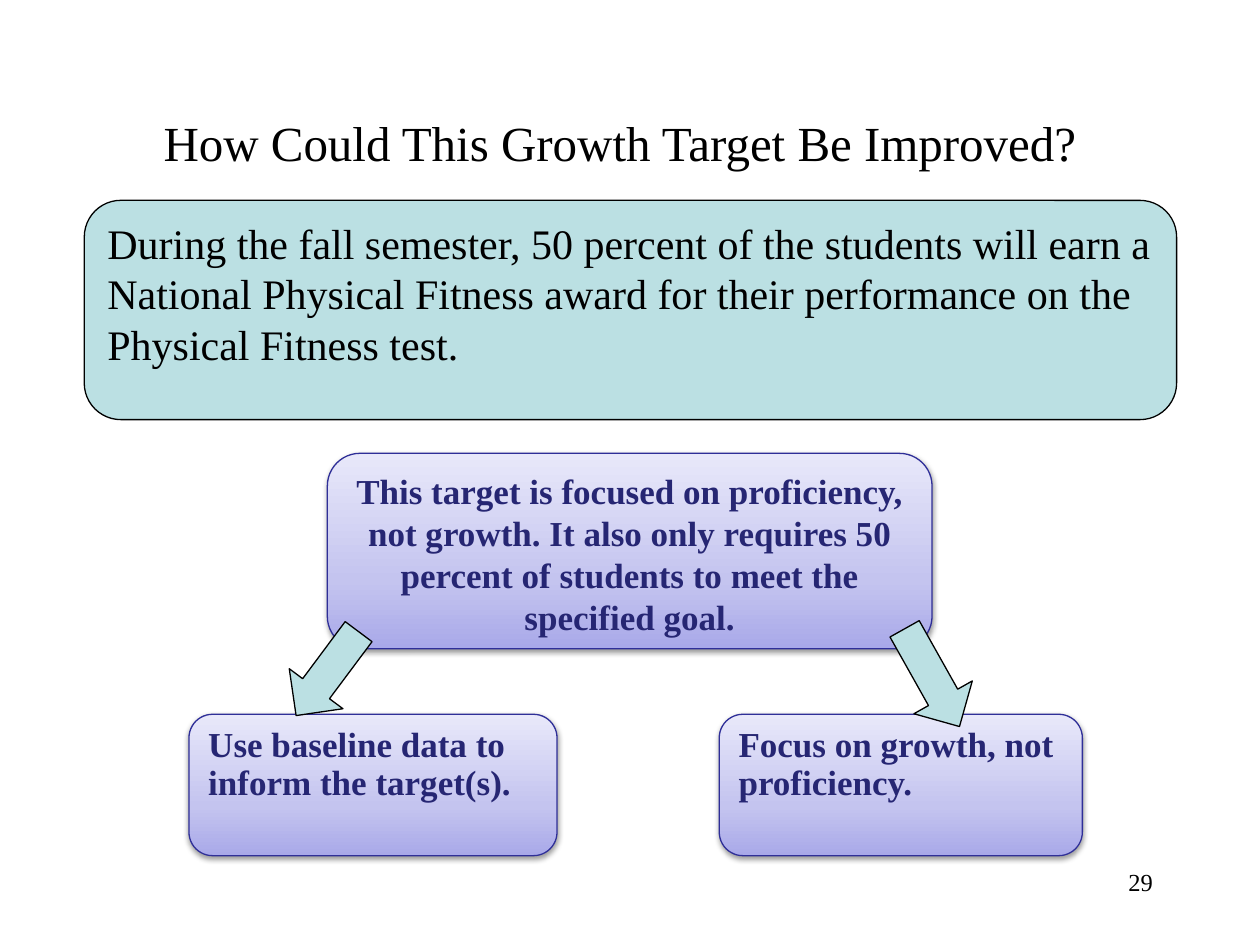
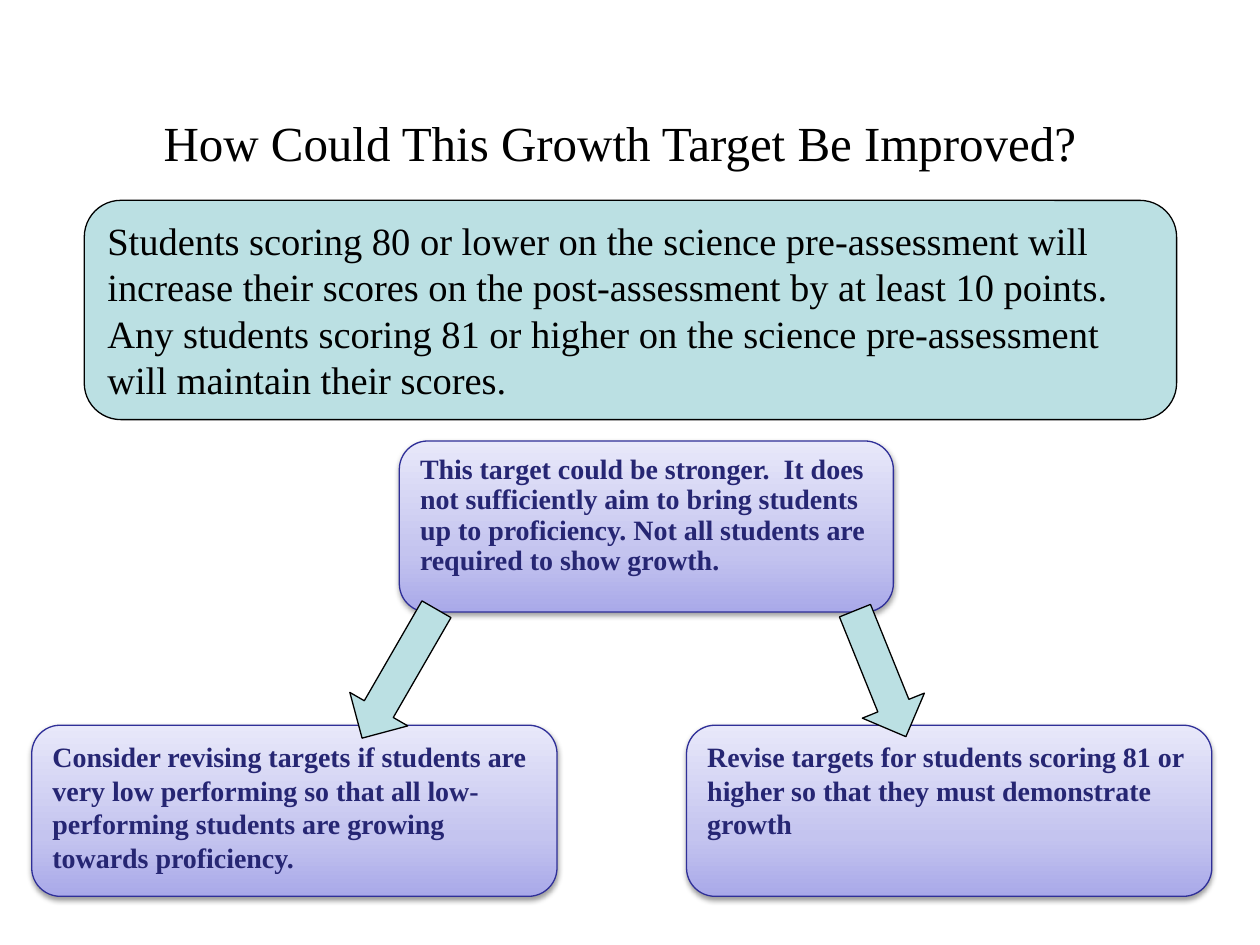
from copy import deepcopy

from lxml.etree import SubElement as Sub
from pptx import Presentation
from pptx.dml.color import RGBColor as Rgb
from pptx.enum.shapes import MSO_SHAPE as Kind
from pptx.enum.text import MSO_ANCHOR as Anchor, PP_ALIGN as Align
from pptx.oxml.ns import qn
from pptx.util import Cm, Pt

INK = {
    "text": "000000",
    "teal": "BBE0E3",
    "navy": "262673",
    "edge": "2F2F98",
    "deep": "A9A9E9",
    "mid": "C4C4EF",
    "pale": "E8E8FA",
}
FONT = "Times New Roman"
TITLE = "How Could This Growth Target Be Improved?"
HEAD = (1.7, 1.27, 21.59, 3.18)
GOAL = (1.7, 4.04, 22.02, 4.42)
FOOT = (18.21, 17.35, 5.28, 1.27)
FADE = ((0, "deep"), (0.35, "mid"), (1, "pale"))
THICK = 1.35


def hue(name):
    return Rgb.from_string(INK[name])


def write(shape, text, size, color="text", bold=False, align=Align.LEFT,
          anchor=Anchor.TOP, space=None):
    frame = shape.text_frame
    frame.word_wrap = True
    frame.vertical_anchor = anchor
    para = frame.paragraphs[0]
    para.alignment = align
    para.line_spacing = space
    run = para.add_run()
    run.text = text
    font = run.font
    font.name, font.size, font.bold = FONT, Pt(size), bold
    font.color.rgb = hue(color)


def label(slide, box, text, size, **form):
    write(slide.shapes.add_textbox(*map(Cm, box)), text, size, **form)


def block(slide, kind, box, edge="text"):
    shape = slide.shapes.add_shape(kind, *map(Cm, box))
    shape.shadow.inherit = False
    shape.fill.solid()
    shape.fill.fore_color.rgb = hue("teal")
    shape.line.color.rgb = hue(edge)
    shape.line.width = Pt(0.75)
    return shape


def shade(shape):
    fill = shape.fill
    fill.gradient()
    fill.gradient_angle = 90
    props = shape._element.spPr
    stops = props.find(".//" + qn("a:gsLst"))
    stops.append(deepcopy(stops[-1]))
    for stop, (place, name) in zip(fill.gradient_stops, FADE):
        stop.position = place
        stop.color.rgb = hue(name)
    drop = Sub(props.find(qn("a:effectLst")), qn("a:outerShdw"),
               blurRad="40000", dist="20000", dir="5400000", rotWithShape="0")
    tone = Sub(drop, qn("a:srgbClr"), val=INK["text"])
    Sub(tone, qn("a:alpha"), val="38000")


def card(slide, box, text, size, **form):
    shape = block(slide, Kind.FLOWCHART_ALTERNATE_PROCESS, box, "edge")
    shade(shape)
    write(shape, text, size, color="navy", bold=True, **form)


def arrow(slide, x, y, long, turn):
    box = (x - long / 2, y - THICK / 2, long, THICK)
    block(slide, Kind.LEFT_ARROW, box).rotation = turn


def top(slide, goal, size):
    label(slide, HEAD, TITLE, 28, align=Align.CENTER, anchor=Anchor.MIDDLE)
    write(block(slide, Kind.ROUNDED_RECTANGLE, GOAL), goal, size)


def flow(slide, box, size, note, tips, arrows, note_form, tip_form):
    left, head, width, height = box
    shift, wide, high, text = note
    start = left + shift
    card(slide, (start, head, wide, high), text, size, **note_form)
    tall, first, last = tips
    low = head + height - tall
    for (span, text), x in ((first, left), (last, left + width - last[0])):
        card(slide, (x, low, span, tall), text, size, **tip_form)
    for x, (dx, dy, long, turn) in zip((start, start + wide), arrows):
        arrow(slide, x + dx, head + high + dy, long, turn)


def fitness(slide):
    top(slide, "During the fall semester, 50 percent of the students will "
        "earn a National Physical Fitness award for their performance on "
        "the Physical Fitness test.", 24)
    flow(
        slide, (3.81, 9.14, 18.01, 8.11), 20,
        (2.79, 12.19, 3.94,
         "This target is focused on proficiency, not growth. It also only "
         "requires 50 percent of students to meet the specified goal."),
        (2.85, (7.42, "Use baseline data to inform the target(s)."),
         (7.32, "Focus on growth, not proficiency.")),
        ((0, 0.5, 2.11, 306.7), (0, 0.58, 2.26, 240.7)),
        {"align": Align.CENTER}, {"space": 0.9})
    label(slide, FOOT, "29", 14, align=Align.RIGHT)


def science(slide):
    top(slide, "Students scoring 80 or lower on the science pre-assessment "
        "will increase their scores on the post-assessment by at least 10 "
        "points. Any students scoring 81 or higher on the science "
        "pre-assessment will maintain their scores.", 22)
    flow(
        slide, (0.64, 8.89, 23.79, 9.18), 16,
        (7.41, 9.96, 3.45,
         "This target could be stronger.  It does not sufficiently aim to "
         "bring students up to proficiency. Not all students are required "
         "to show growth."),
        (3.45, (10.59, "Consider revising targets if students are very low "
                "performing so that all low-performing students are growing "
                "towards proficiency."),
         (10.59, "Revise targets for students scoring 81 or higher so that "
          "they must demonstrate growth")),
        ((0, 1.24, 3, 300), (-0.26, 1.24, 2.74, 248)),
        {"space": 0.9}, {})


def main():
    deck = Presentation()
    deck.slide_width, deck.slide_height = Cm(25.4), Cm(19.05)
    for build in (fitness, science):
        build(deck.slides.add_slide(deck.slide_layouts[6]))
    deck.save("out.pptx")


if __name__ == "__main__":
    main()
